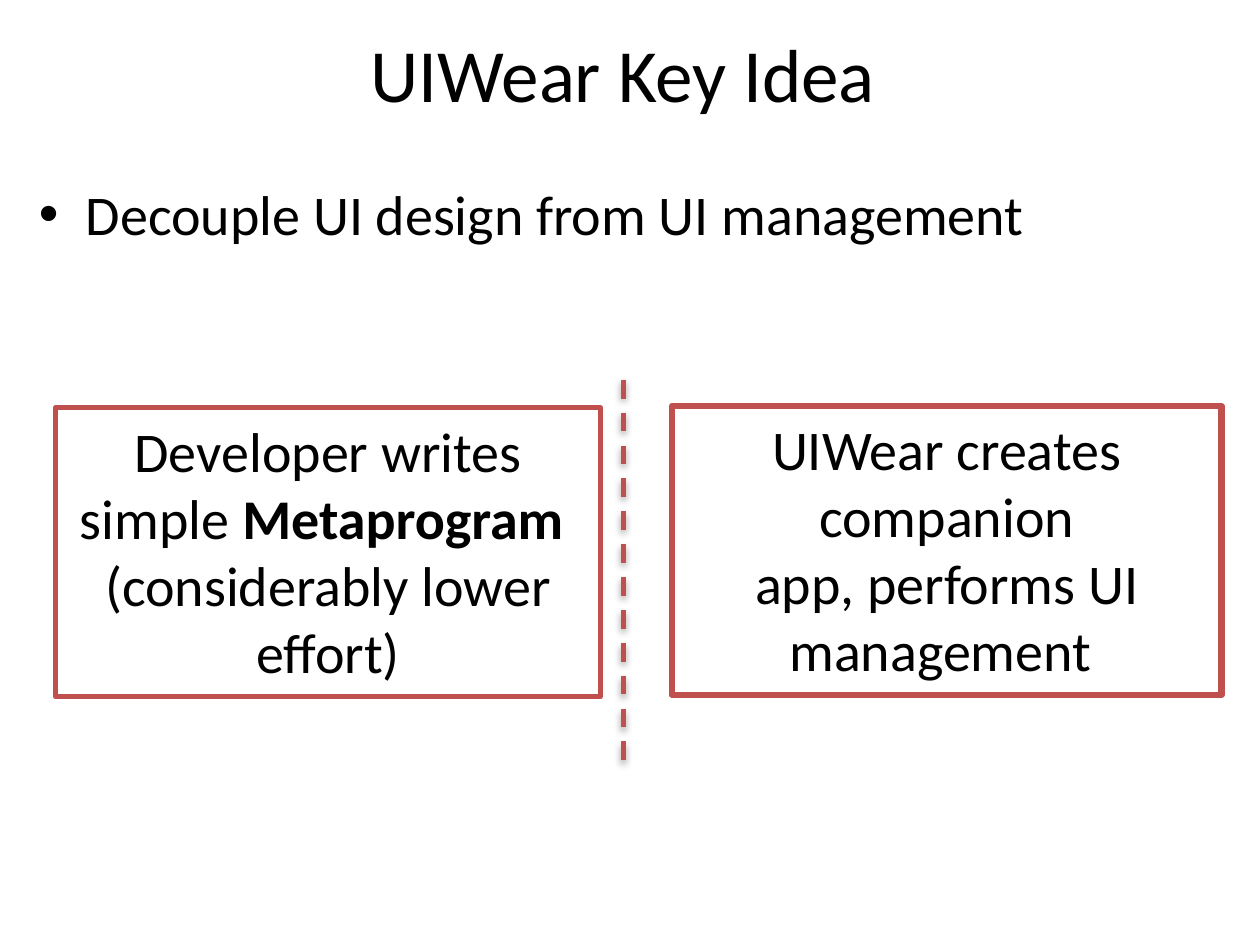
from dataclasses import dataclass

from lxml import etree
from pptx import Presentation
from pptx.dml.color import RGBColor
from pptx.enum.dml import MSO_LINE
from pptx.enum.shapes import MSO_CONNECTOR, MSO_SHAPE
from pptx.enum.text import MSO_ANCHOR, MSO_AUTO_SIZE, PP_ALIGN
from pptx.oxml import parse_xml
from pptx.oxml.ns import nsdecls, qn
from pptx.util import Pt

LEFT, CENTER = PP_ALIGN.LEFT, PP_ALIGN.CENTER
TOP, MIDDLE = MSO_ANCHOR.TOP, MSO_ANCHOR.MIDDLE
NO_AUTOFIT = MSO_AUTO_SIZE.NONE
RECTANGLE = MSO_SHAPE.RECTANGLE
STRAIGHT = MSO_CONNECTOR.STRAIGHT
DASH = MSO_LINE.DASH


@dataclass(frozen=True)
class Theme:
    font: str = "Calibri"
    ink: RGBColor = RGBColor(0x00, 0x00, 0x00)
    accent: RGBColor = RGBColor(0xC0, 0x50, 0x4D)
    title_size: float = 32.2
    body_size: float = 24


THEME = Theme()


def write(shape, paragraphs, size=THEME.body_size, align=CENTER, anchor=TOP, bullet_indent=None):
    """Fill a shape; each paragraph is a list of (text, bold) runs."""
    frame = shape.text_frame
    frame.word_wrap = True
    frame.auto_size = NO_AUTOFIT
    frame.vertical_anchor = anchor
    frame.margin_left = frame.margin_right = Pt(7.2)
    frame.margin_top = frame.margin_bottom = Pt(3.6)
    for index, runs in enumerate(paragraphs):
        paragraph = frame.add_paragraph() if index else frame.paragraphs[0]
        paragraph.alignment = align
        paragraph.space_before = Pt(0)
        if bullet_indent:
            properties = paragraph._p.get_or_add_pPr()
            properties.set("marL", str(Pt(bullet_indent)))
            properties.set("indent", str(Pt(-bullet_indent)))
            etree.SubElement(properties, qn("a:buFont")).set("typeface", "Arial")
            etree.SubElement(properties, qn("a:buChar")).set("char", "•")
        for text, bold in runs:
            run = paragraph.add_run()
            run.text = text
            run.font.name = THEME.font
            run.font.size = Pt(size)
            run.font.bold = bold
            run.font.color.rgb = THEME.ink


def place(shape, box):
    shape.left, shape.top, shape.width, shape.height = (Pt(v) for v in box)


def add_heading(slide, box, text):
    place(slide.shapes.title, box)
    write(slide.shapes.title, [[(text, False)]], size=THEME.title_size, anchor=MIDDLE)


def add_bullets(slide, box, items):
    body = slide.placeholders[1]
    place(body, box)
    write(body, [[(item, False)] for item in items], align=LEFT, bullet_indent=20.25)


def add_role(slide, box, paragraphs, line_width):
    role = slide.shapes.add_shape(RECTANGLE, *(Pt(v) for v in box))
    role.shadow.inherit = False
    role.fill.background()
    role.line.color.rgb = THEME.accent
    role.line.width = Pt(line_width)
    write(role, paragraphs)


def add_divider(slide, box):
    x, top, _, height = box
    divider = slide.shapes.add_connector(STRAIGHT, Pt(x), Pt(top), Pt(x), Pt(top + height))
    divider.line.color.rgb = THEME.accent
    divider.line.width = Pt(2)
    divider.line.dash_style = DASH
    # Soft shadow straight below the line
    divider._element.spPr.append(parse_xml(
        f'<a:effectLst {nsdecls("a")}>'
        f'<a:outerShdw blurRad="{Pt(3.1)}" dist="{Pt(1.6)}" dir="5400000" rotWithShape="0">'
        '<a:srgbClr val="000000"><a:alpha val="38000"/></a:srgbClr>'
        '</a:outerShdw></a:effectLst>'))


def add_split(slide, box):
    """Developer on the left, UIWear on the right, dashed divider between."""
    left, top, width, height = box
    role_top, role_height = top + 12, 123.84
    developer_width, uiwear_width = 233.5, 235.5
    add_role(slide, (left, role_top, developer_width, role_height), [
        [("Developer writes simple ", False), ("Metaprogram ", True)],
        [("(considerably lower effort)", False)],
    ], line_width=2.25)
    add_divider(slide, (left + 243.3, top, 0, height))
    add_role(slide, (left + width - uiwear_width, role_top - 0.8, uiwear_width, role_height), [
        [("UIWear creates companion", False)],
        [("app, performs UI management ", False)],
    ], line_width=2.75)


def main():
    deck = Presentation()
    deck.slide_width, deck.slide_height = Pt(540), Pt(405)
    slide = deck.slides.add_slide(deck.slide_layouts[1])
    add_heading(slide, (24, 9.4, 486, 43.2), "UIWear Key Idea")
    add_bullets(slide, (9.4, 73.4, 501, 199.4), ["Decouple UI design from UI management"])
    add_split(slide, (23.8, 162.8, 499.7, 164))
    deck.save("out.pptx")


if __name__ == "__main__":
    main()
